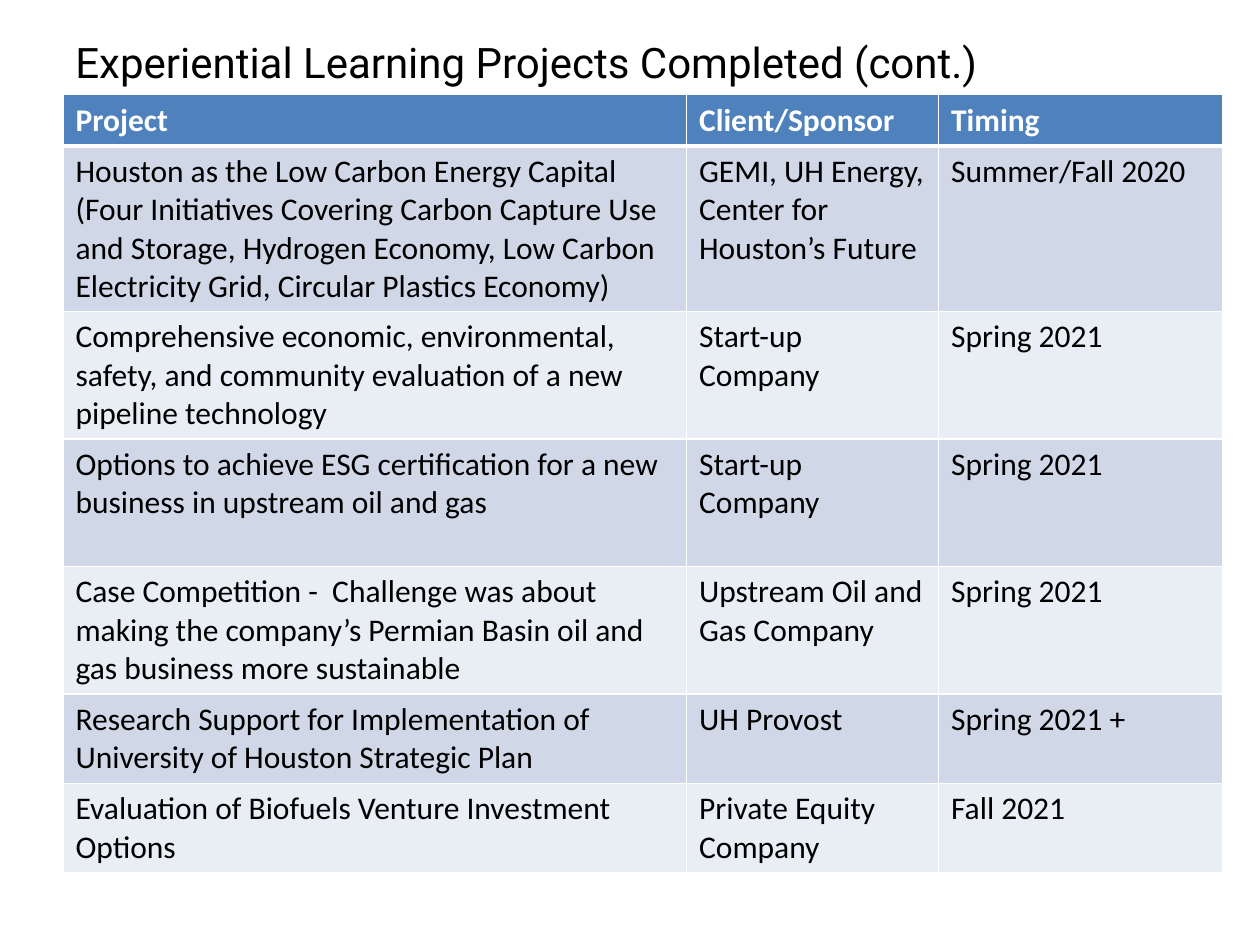
import pptx
import pptx.dml.color
import pptx.enum.text
import pptx.oxml
import pptx.oxml.ns
import pptx.util

Cm = pptx.util.Cm
Pt = pptx.util.Pt

TITLE = "Experiential Learning Projects Completed (cont.)"
HEADINGS = ("Project", "Client/Sponsor", "Timing")
# Each project: its three cells, then the number of text lines its row holds.
PROJECTS = [
    (("Houston as the Low Carbon Energy Capital (Four Initiatives Covering Carbon "
      "Capture Use and Storage, Hydrogen Economy, Low Carbon Electricity Grid, "
      "Circular Plastics Economy)",
      "GEMI, UH Energy, Center for Houston’s Future", "Summer/Fall 2020"), 4),
    (("Comprehensive economic, environmental, safety, and community evaluation "
      "of a new pipeline technology", "Start-up Company", "Spring 2021"), 3),
    (("Options to achieve ESG certification for a new business in upstream oil and gas",
      "Start-up Company", "Spring 2021"), 3),
    (("Case Competition -  Challenge was about making the company’s Permian Basin "
      "oil and gas business more sustainable",
      "Upstream Oil and Gas Company", "Spring 2021"), 3),
    (("Research Support for Implementation of University of Houston Strategic Plan",
      "UH Provost", "Spring 2021 +"), 2),
    (("Evaluation of Biofuels Venture Investment Options",
      "Private Equity Company", "Fall 2021"), 2),
]

THEME = {
    "title": {"name": "Roboto", "size": Pt(24), "color": "000000"},
    "heading": {"name": "Calibri", "size": Pt(18), "bold": True, "color": "FFFFFF"},
    "body": {"name": "Calibri", "size": Pt(18), "bold": False, "color": "000000"},
    "heading_fill": "4F81BD",
    "band_fills": ("D0D8E8", "E9EDF4"),
    "border": "FFFFFF",
    "thin": Pt(1),
    "thick": Pt(3),
}

LEFT = Cm(1.27)
TABLE_TOP = Cm(1.91)
COLUMN_WIDTHS = (Cm(12.57), Cm(5.08), Cm(5.72))
LINE_HEIGHT = Cm(0.77)
ROW_PADDING = Cm(0.26)


def write(text_frame, text, style):
    text_frame.text = text
    font = text_frame.paragraphs[0].runs[0].font
    for attribute, value in style.items():
        if attribute == "color":
            font.color.rgb = pptx.dml.color.RGBColor.from_string(value)
        else:
            setattr(font, attribute, value)


def add_borders(cell, top, bottom):
    """Give all four sides a line; must run before the cell is filled."""
    properties = cell._tc.get_or_add_tcPr()
    sides = {"lnL": THEME["thin"], "lnR": THEME["thin"], "lnT": top, "lnB": bottom}
    for side, width in sides.items():
        properties.append(pptx.oxml.parse_xml(
            f'<a:{side} {pptx.oxml.ns.nsdecls("a")} w="{int(width)}">'
            f'<a:solidFill><a:srgbClr val="{THEME["border"]}"/></a:solidFill></a:{side}>'))


def add_title(slide):
    box = slide.shapes.add_textbox(LEFT, Cm(0.61), Cm(22.86), Cm(1.14))
    box.text_frame.word_wrap = True
    box.text_frame.vertical_anchor = pptx.enum.text.MSO_ANCHOR.TOP
    write(box.text_frame, TITLE, THEME["title"])


def add_project_table(slide):
    rows = [(HEADINGS, 1)] + PROJECTS
    heights = [lines * LINE_HEIGHT + ROW_PADDING for _, lines in rows]
    table = slide.shapes.add_table(
        len(rows), len(HEADINGS), LEFT, TABLE_TOP, sum(COLUMN_WIDTHS), sum(heights)).table
    for column, width in zip(table.columns, COLUMN_WIDTHS):
        column.width = width

    for row_index, (texts, _) in enumerate(rows):
        table.rows[row_index].height = heights[row_index]
        is_heading = row_index == 0
        style = THEME["heading" if is_heading else "body"]
        fill = THEME["heading_fill"] if is_heading else THEME["band_fills"][(row_index - 1) % 2]
        top = THEME["thick" if row_index == 1 else "thin"]
        bottom = THEME["thick" if is_heading else "thin"]
        for column_index, text in enumerate(texts):
            cell = table.cell(row_index, column_index)
            write(cell.text_frame, text, style)
            add_borders(cell, top, bottom)
            cell.fill.solid()
            cell.fill.fore_color.rgb = pptx.dml.color.RGBColor.from_string(fill)


def main():
    presentation = pptx.Presentation()
    presentation.slide_width = Cm(25.4)
    presentation.slide_height = Cm(19.05)
    slide = presentation.slides.add_slide(presentation.slide_layouts[6])
    add_title(slide)
    add_project_table(slide)
    presentation.save("out.pptx")


if __name__ == "__main__":
    main()
